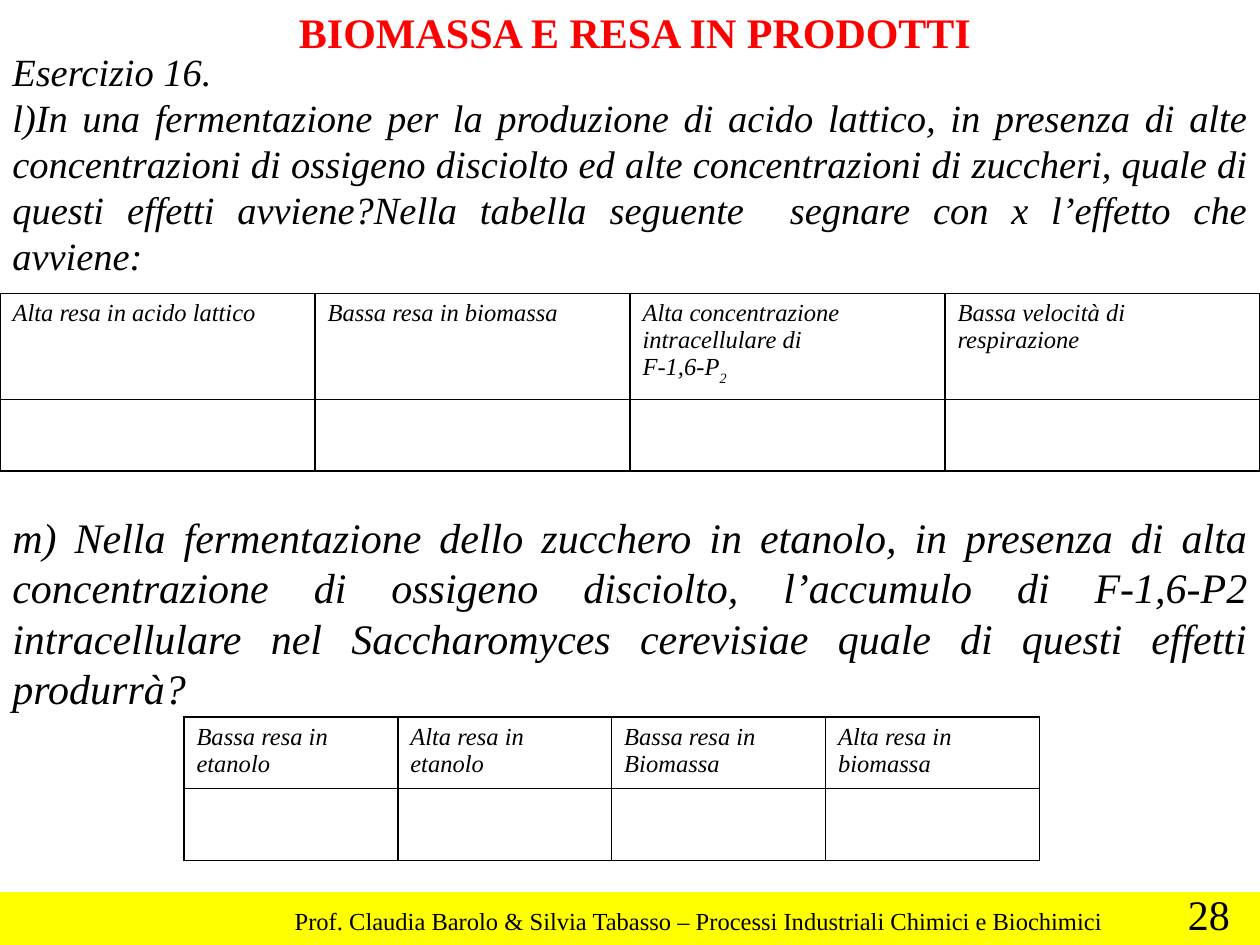
import dataclasses

import pptx
import pptx.dml.color
import pptx.enum.shapes
import pptx.enum.text
import pptx.oxml
import pptx.oxml.ns
import pptx.util

Inches = pptx.util.Inches
Align = pptx.enum.text.PP_ALIGN
Anchor = pptx.enum.text.MSO_ANCHOR
RGB = pptx.dml.color.RGBColor.from_string


@dataclasses.dataclass(frozen=True)
class Theme:
    face: str = "Times New Roman"
    ink: str = "000000"
    red: str = "FF0000"
    band: str = "FFFF00"
    small: int = 14
    body: int = 22
    large: int = 24
    rule: int = 1


theme = Theme()


def style(font, size, color=theme.ink, **extra):
    values = {"name": theme.face, "size": pptx.util.Pt(size), **extra}
    for key, value in values.items():
        setattr(font, key, value)
    font.color.rgb = RGB(color)


def write(frame, lines, size, align=Align.LEFT, wrap=True, **extra):
    values = {"word_wrap": wrap, "vertical_anchor": Anchor.TOP,
              "auto_size": pptx.enum.text.MSO_AUTO_SIZE.NONE}
    for key, value in values.items():
        setattr(frame, key, value)
    for i, line in enumerate(lines):
        para = frame.paragraphs[0] if i == 0 else frame.add_paragraph()
        para.alignment = align
        run = para.add_run()
        run.text = line
        style(run.font, size, **extra)


def add_text(slide, box, lines, size, **extra):
    shape = slide.shapes.add_textbox(*map(Inches, box))
    write(shape.text_frame, lines, size, **extra)


def add_title(slide, box, text):
    title = slide.shapes.title
    for key, value in zip(("left", "top", "width", "height"), box):
        setattr(title, key, Inches(value))
    write(title.text_frame, [text], theme.large, align=Align.CENTER,
          color=theme.red, bold=True)


def add_footer(slide, box, credit, number):
    x, y, w, h = box
    band = slide.shapes.add_shape(
        pptx.enum.shapes.MSO_SHAPE.RECTANGLE, *map(Inches, box))
    band.shadow.inherit = False
    band.fill.solid()
    band.fill.fore_color.rgb = RGB(theme.band)
    band.line.fill.background()
    add_text(slide, (x + 2.24, y + 0.06, 6.71, 0.34), [credit],
             theme.small, wrap=False)
    add_text(slide, (x + w - 0.67, y - 0.08, 0.53, 0.5), [number],
             theme.large, wrap=False)


def outline(cell):
    props = cell._tc.get_or_add_tcPr()
    space = pptx.oxml.ns.nsdecls("a")
    for side in "LRTB":
        props.append(pptx.oxml.parse_xml(
            f'<a:ln{side} {space} w="{pptx.util.Pt(theme.rule)}"><a:solidFill>'
            f'<a:srgbClr val="{theme.ink}"/></a:solidFill></a:ln{side}>'))
    cell.fill.background()


def add_grid(slide, box, heads, rows):
    # One row of headings above one row of answer cells
    shape = slide.shapes.add_table(len(rows), len(heads), *map(Inches, box))
    table = shape.table
    table.first_row = table.horz_banding = False
    for col in table.columns:
        col.width = Inches(box[2] / len(heads))
    for row, height in zip(table.rows, rows):
        row.height = Inches(height)
    for cell in table.iter_cells():
        outline(cell)
    for col, lines in enumerate(heads):
        write_cell(table.cell(0, col), lines)


def write_cell(cell, lines):
    # A tuple holds a line's base text and its subscript
    frame = cell.text_frame
    for i, line in enumerate(lines):
        para = frame.paragraphs[0] if i == 0 else frame.add_paragraph()
        parts = line if isinstance(line, tuple) else (line,)
        for j, part in enumerate(parts):
            run = para.add_run()
            run.text = part
            style(run.font, theme.small, italic=True)
            if j:
                run._r.get_or_add_rPr().set("baseline", "-30000")


def main():
    deck = pptx.Presentation()
    deck.slide_width, deck.slide_height = Inches(10), Inches(7.5)
    slide = deck.slides.add_slide(deck.slide_layouts[5])

    add_footer(slide, (0, 7.08, 10, 0.42),
               "Prof. Claudia Barolo & Silvia Tabasso – "
               "Processi Industriali Chimici e Biochimici", "28")

    # Question l
    add_text(slide, (0, 0.33, 10, 1.95), [
        "Esercizio 16.",
        "l)In una fermentazione per la produzione di acido lattico, in "
        "presenza di alte concentrazioni di ossigeno disciolto ed alte "
        "concentrazioni di zuccheri, quale di questi effetti avviene?Nella "
        "tabella seguente  segnare con x l’effetto che avviene:",
    ], theme.body, align=Align.JUSTIFY, italic=True)
    add_grid(slide, (0, 2.33, 10, 1.41), [
        ["Alta resa in acido lattico"],
        ["Bassa resa in biomassa"],
        ["Alta concentrazione intracellulare di", ("F-1,6-P", "2")],
        ["Bassa velocità di respirazione"],
    ], (0.84, 0.57))

    # Question m
    add_text(slide, (0, 4.01, 10, 1.7), [
        "m) Nella fermentazione dello zucchero in etanolo, in presenza di "
        "alta concentrazione di ossigeno disciolto, l’accumulo di F-1,6-P2 "
        "intracellulare nel Saccharomyces cerevisiae quale di questi effetti "
        "produrrà?",
    ], theme.large, align=Align.JUSTIFY, italic=True)
    add_grid(slide, (1.46, 5.69, 6.79, 1.14), [
        ["Bassa resa in etanolo"],
        ["Alta resa in etanolo"],
        ["Bassa resa in Biomassa"],
        ["Alta resa in biomassa"],
    ], (0.57, 0.57))

    add_title(slide, (0.59, 0, 8.9, 0.5), "BIOMASSA E RESA IN PRODOTTI")
    deck.save("out.pptx")


if __name__ == "__main__":
    main()
